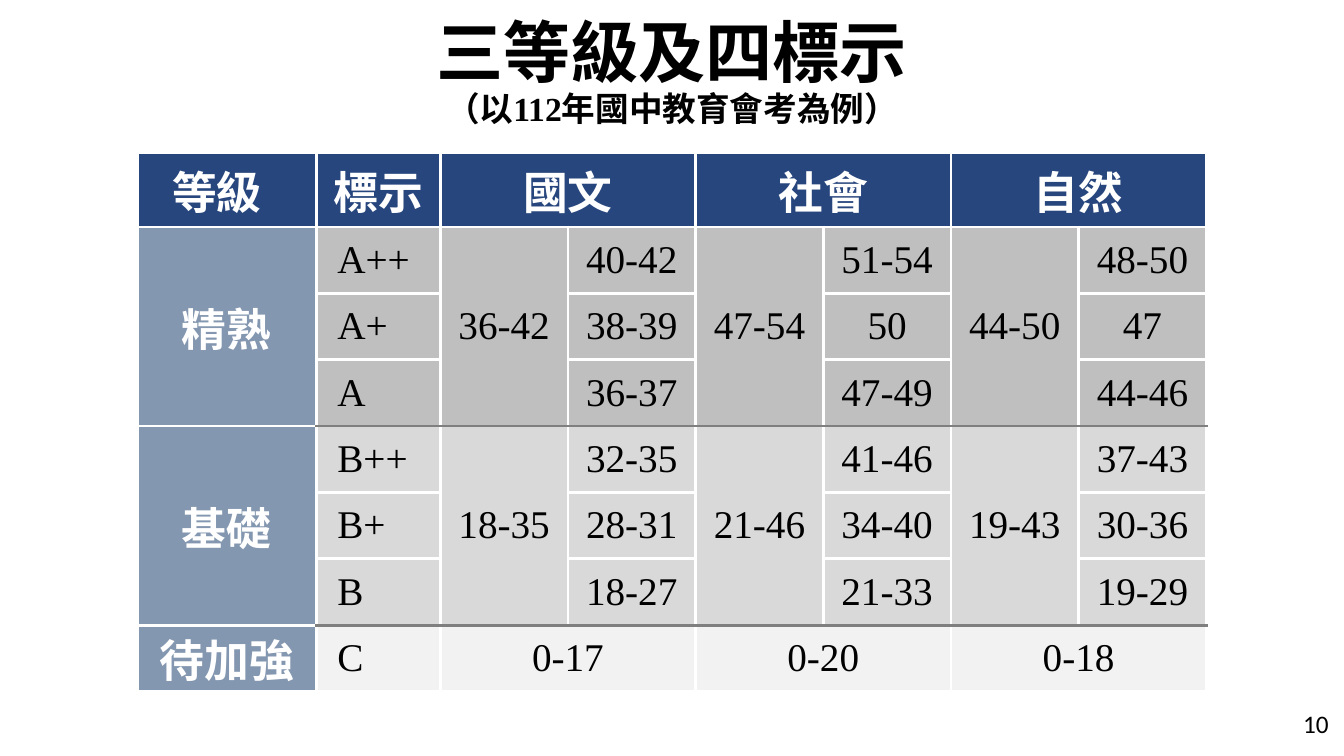
from lxml.etree import SubElement
from pptx import Presentation
from pptx.dml.color import RGBColor
from pptx.enum.text import MSO_ANCHOR, PP_ALIGN
from pptx.oxml.ns import qn
from pptx.util import Pt


def color(hex_string):
    return RGBColor.from_string(hex_string)


def add_border(cell, side, hex_string):
    line = SubElement(cell._tc.get_or_add_tcPr(), qn("a:ln" + side), w=str(Pt(2.25)))
    fill = SubElement(line, qn("a:solidFill"))
    SubElement(fill, qn("a:srgbClr"), val=hex_string)


presentation = Presentation()
presentation.slide_width = Pt(960)
presentation.slide_height = Pt(540)
slide = presentation.slides.add_slide(presentation.slide_layouts[6])

# Title
title = slide.shapes.add_textbox(Pt(66), Pt(0.75), Pt(828), Pt(104.4))
title.text_frame.word_wrap = True
title.text_frame.vertical_anchor = MSO_ANCHOR.MIDDLE
paragraph = title.text_frame.paragraphs[0]
paragraph.alignment = PP_ALIGN.CENTER
paragraph.line_spacing = 0.9
title_runs = [
    ("三等級及四標示", 48, "Calibri"),
    ("（以", 24, "Calibri"),
    ("112", 24, "Times New Roman"),
    ("年國中教育會考為例）", 24, "Calibri"),
]
for index, (text, size, font_name) in enumerate(title_runs):
    if index == 1:
        paragraph.add_line_break()
    run = paragraph.add_run()
    run.text = text
    run.font.size = Pt(size)
    run.font.name = font_name
    run.font.bold = True
    run.font.color.rgb = color("000000")

# Score table
rows = [
    ["等級", "標示", "國文", "", "社會", "", "自然", ""],
    ["精熟", "A++", "36-42", "40-42", "47-54", "51-54", "44-50", "48-50"],
    ["", "A+", "", "38-39", "", "50", "", "47"],
    ["", "A", "", "36-37", "", "47-49", "", "44-46"],
    ["基礎", "B++", "18-35", "32-35", "21-46", "41-46", "19-43", "37-43"],
    ["", "B+", "", "28-31", "", "34-40", "", "30-36"],
    ["", "B", "", "18-27", "", "21-33", "", "19-29"],
    ["待加強", "C", "0-17", "", "0-20", "", "0-18", ""],
]
column_widths = [128, 88.5] + [91.2] * 6
row_heights = [53.2] + [47.4] * 7
row_fills = ["27467D"] + ["BFBFBF"] * 3 + ["D9D9D9"] * 3 + ["F2F2F2"]
level_last_rows = (3, 6)

table = slide.shapes.add_table(
    len(rows), len(column_widths), Pt(98), Pt(109),
    Pt(sum(column_widths)), Pt(sum(row_heights))).table
table.first_row = False
table.horz_banding = False
for column, width in zip(table.columns, column_widths):
    column.width = Pt(width)
for row, height in zip(table.rows, row_heights):
    row.height = Pt(height)

# Subjects span two columns; levels and their ranges span three rows
for column_index in (2, 4, 6):
    for row_index in (0, 7):
        table.cell(row_index, column_index).merge(table.cell(row_index, column_index + 1))
for column_index in (0, 2, 4, 6):
    for row_index in (1, 4):
        table.cell(row_index, column_index).merge(table.cell(row_index + 2, column_index))

for row_index, row_texts in enumerate(rows):
    for column_index, text in enumerate(row_texts):
        cell = table.cell(row_index, column_index)
        is_heading = row_index == 0 or column_index == 0
        last_row = row_index + cell.span_height - 1

        # Grey rules separate the levels, white rules the rest
        grey_top = column_index > 0 and row_index - 1 in level_last_rows
        grey_bottom = column_index > 0 and last_row in level_last_rows
        add_border(cell, "L", "FFFFFF")
        add_border(cell, "R", "FFFFFF")
        add_border(cell, "T", "7F7F7F" if grey_top else "FFFFFF")
        add_border(cell, "B", "7F7F7F" if grey_bottom else "FFFFFF")

        is_level = column_index == 0 and row_index > 0
        cell.fill.solid()
        cell.fill.fore_color.rgb = color("8497B0" if is_level else row_fills[row_index])
        cell.vertical_anchor = MSO_ANCHOR.MIDDLE
        cell.margin_left = cell.margin_right = Pt(1)
        cell.margin_top = cell.margin_bottom = Pt(0)

        paragraph = cell.text_frame.paragraphs[0]
        paragraph.alignment = PP_ALIGN.CENTER
        if row_index == 0 and column_index == 0:
            paragraph.alignment = PP_ALIGN.LEFT
            cell.margin_left = Pt(25)
        elif column_index == 1 and row_index > 0:
            paragraph.alignment = PP_ALIGN.LEFT
            cell.margin_left = Pt(15)
        paragraph.font.name = "Times New Roman"
        paragraph.font.size = Pt(32 if is_heading else 28)
        paragraph.font.bold = is_heading
        paragraph.font.color.rgb = color("FFFFFF" if is_heading else "000000")
        if text:
            paragraph.add_run().text = text

# Page number
page_number = slide.shapes.add_textbox(Pt(923.8), Pt(502.6), Pt(36), Pt(28.8))
page_number.text_frame.word_wrap = True
page_number.text_frame.vertical_anchor = MSO_ANCHOR.MIDDLE
paragraph = page_number.text_frame.paragraphs[0]
paragraph.add_run().text = "10"
paragraph.font.name = "Calibri"
paragraph.font.size = Pt(18)
paragraph.font.color.rgb = color("000000")

presentation.save("out.pptx")
